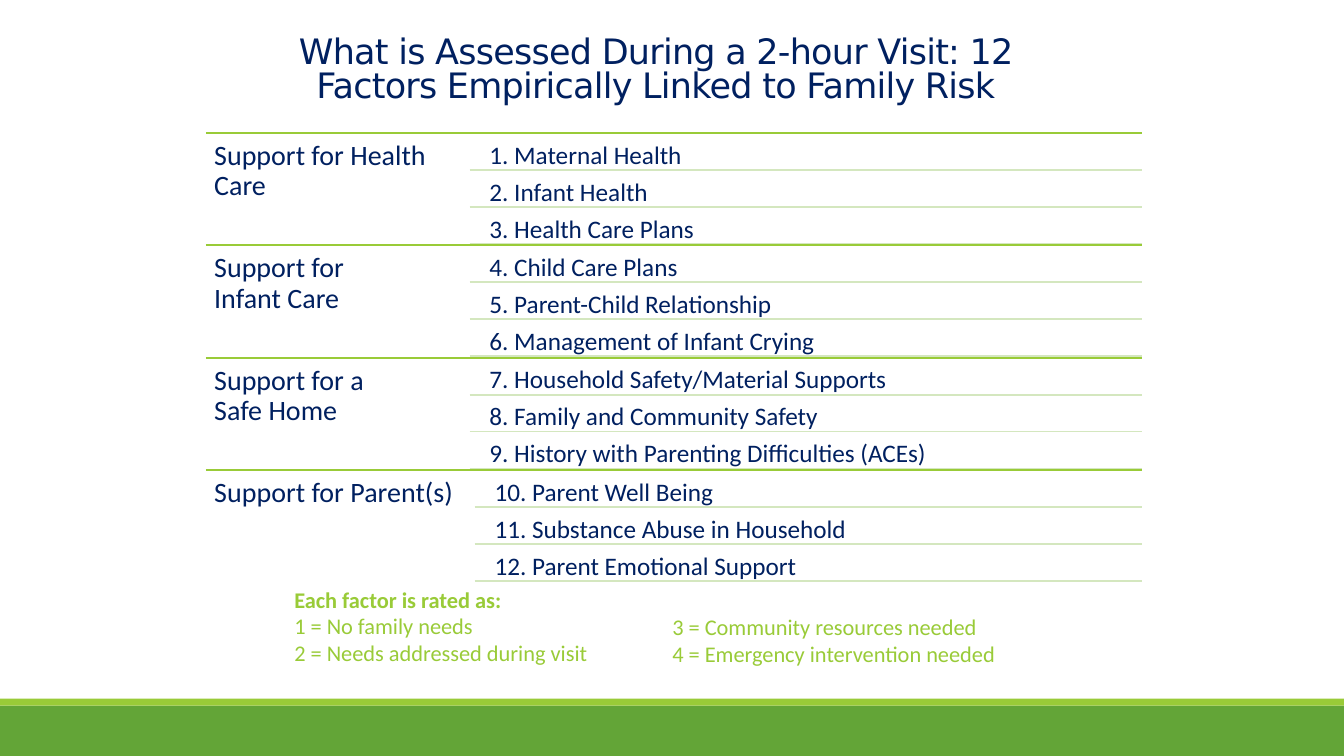
from dataclasses import dataclass

from lxml import etree
from pptx import Presentation
from pptx.dml.color import RGBColor
from pptx.enum.shapes import MSO_CONNECTOR, MSO_SHAPE
from pptx.enum.text import MSO_ANCHOR, MSO_AUTO_SIZE, PP_ALIGN
from pptx.oxml.ns import qn
from pptx.util import Pt

RECT = MSO_SHAPE.RECTANGLE
STRAIGHT = MSO_CONNECTOR.STRAIGHT
TOP = MSO_ANCHOR.TOP
NO_FIT = MSO_AUTO_SIZE.NONE
LEFT, CENTER = PP_ALIGN.LEFT, PP_ALIGN.CENTER


@dataclass(frozen=True)
class Theme:
    navy: str = "002060"
    lime: str = "99CB38"
    pale: str = "D4E7BF"
    green: str = "63A537"
    head_font: str = "DejaVu Sans"
    font: str = "Calibri"
    head: int = 25
    label: int = 20
    item: int = 18
    note: int = 16
    rule: float = 1.25


TITLE = "What is Assessed During a 2-hour Visit: 12 Factors Empirically Linked to Family Risk"
GROUPS = [
    ("Support for Health Care",
     ["Maternal Health", "Infant Health", "Health Care Plans"]),
    ("Support for\vInfant Care",
     ["Child Care Plans", "Parent-Child Relationship", "Management of Infant Crying"]),
    ("Support for a\vSafe Home",
     ["Household Safety/Material Supports", "Family and Community Safety",
      "History with Parenting Difficulties (ACEs)"]),
    ("Support for Parent(s)",
     ["Parent Well Being", "Substance Abuse in Household", "Parent Emotional Support"]),
]
RATING = "Each factor is rated as:"
LOW = ["1 = No family needs", "2 = Needs addressed during visit"]
HIGH = ["3 = Community resources needed", "4 = Emergency intervention needed"]


def apply(target, values):
    for name, value in values.items():
        setattr(target, name, value)


class Deck:
    def __init__(self, theme):
        self.theme = theme
        self.file = Presentation()
        apply(self.file, {"slide_width": Pt(960), "slide_height": Pt(540)})
        self.slide = self.file.slides.add_slide(self.file.slide_layouts[3])

    def fill(self, shape, lines, size, color, font, pads, spacing=1.0, align=LEFT):
        """Fill a shape with paragraphs; pads are the side and top insets."""
        side, top = map(Pt, pads)
        frame = shape.text_frame
        frame.text = "\n".join(lines)
        apply(frame, {"word_wrap": True, "auto_size": NO_FIT, "vertical_anchor": TOP,
                      "margin_left": side, "margin_right": side,
                      "margin_top": top, "margin_bottom": 0})
        for para in frame.paragraphs:
            apply(para, {"line_spacing": spacing, "space_before": Pt(0),
                         "space_after": Pt(0), "alignment": align})
            for run in para.runs:
                apply(run.font, {"size": Pt(size), "name": font, "bold": False})
                run.font.color.rgb = RGBColor.from_string(color)
        return frame

    def place(self, index, box):
        """Move a placeholder to the given box."""
        shape = self.slide.placeholders[index]
        apply(shape, dict(zip(("left", "top", "width", "height"), map(Pt, box))))
        return shape

    def title(self, text, box):
        look = self.theme
        frame = self.fill(self.place(0, box), [text], look.head, look.navy,
                          look.head_font, (7.2, 27), 0.8, CENTER)
        frame.paragraphs[0].runs[0].font._element.set("spc", "-50")

    def list(self, index, lines, box):
        look = self.theme
        frame = self.fill(self.place(index, box), lines, look.note, look.lime,
                          look.font, (7.2, 3.6))
        for para in frame.paragraphs:
            props = para._p.get_or_add_pPr()
            for name in ("marL", "indent"):
                props.set(name, "0")
            etree.SubElement(props, qn("a:buNone"))
        return frame

    def text(self, words, size, box, pad):
        shape = self.slide.shapes.add_textbox(*map(Pt, box))
        self.fill(shape, [words], size, self.theme.navy, self.theme.font,
                  (pad, pad), 0.9)

    def rule(self, left, right, y, color):
        line = self.slide.shapes.add_connector(STRAIGHT, Pt(left), Pt(y), Pt(right), Pt(y))
        line.line.width = Pt(self.theme.rule)
        line.line.color.rgb = RGBColor.from_string(color)
        etree.SubElement(line._element.spPr, qn("a:effectLst"))

    def bar(self, box, color):
        shape = self.slide.shapes.add_shape(RECT, *map(Pt, box))
        shape.shadow.inherit = False
        shape.fill.solid()
        shape.fill.fore_color.rgb = RGBColor.from_string(color)
        shape.line.fill.background()


def main():
    look = Theme()
    deck = Deck(look)
    deck.bar((0, 504, 960, 36), look.green)
    deck.bar((0, 499, 960, 5), look.lime)
    deck.title(TITLE, (181.5, 0, 574, 96.5))

    left, right, start = 147, 815.5, 95
    pitch, step = 80.25, 26.4
    for row, (label, items) in enumerate(GROUPS):
        top = start + row * pitch
        shift = 3.6 if row == len(GROUPS) - 1 else 0
        edge = 335.5 + shift
        deck.rule(left, right, top, look.lime)
        deck.text(label, look.label, (left, top, 188.5 + shift, 80), 6)
        for place, item in enumerate(items, 1):
            base = top + place * step
            number = row * len(items) + place
            deck.text(f"{number}. {item}", look.item,
                      (edge + 8.7, base - 25, right - edge - 8.7, 25), 5.4)
            deck.rule(edge, right, base, look.pale)

    notes = deck.list(1, [RATING, *LOW], (203, 414.7, 270, 70))
    notes.paragraphs[0].runs[0].font.bold = True
    deck.list(2, HIGH, (473, 434.2, 285, 50))
    deck.file.save("out.pptx")


if __name__ == "__main__":
    main()
